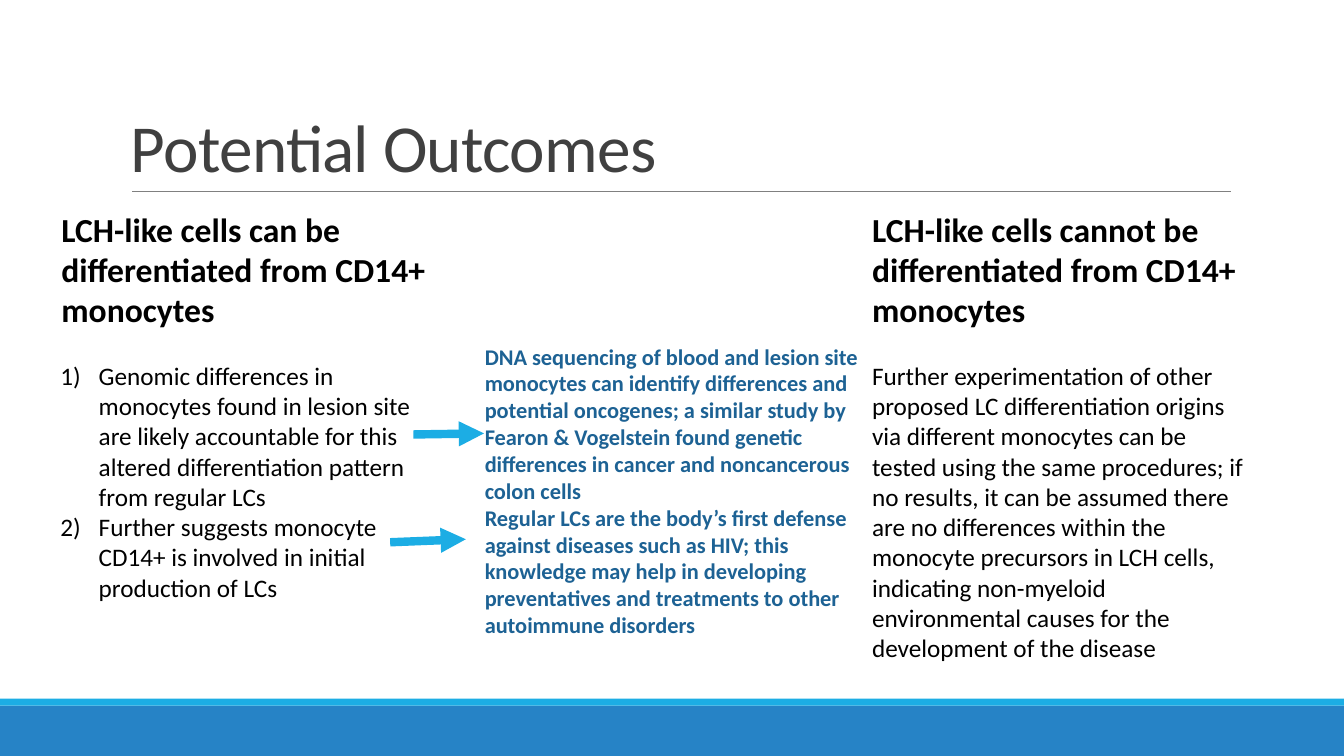
"""Build the Potential Outcomes slide: two outcomes with linked implications."""
import pptx
import pptx.dml.color
import pptx.enum.shapes
import pptx.enum.text
import pptx.oxml.ns
import pptx.util
from lxml import etree

SLIDE_WIDTH, SLIDE_HEIGHT = 13.33, 7.5
FONT = "Calibri"
COLOURS = {"band": "2683C6", "accent": "1CADE4", "rule": "808080",
           "title": "404040", "body": "000000", "implication": "1D6294"}

STYLES = {
    "title": {"size": 48, "colour": "title", "line_spacing": 0.85, "tracking": -50},
    "heading": {"size": 24, "colour": "body", "bold": True, "margin": 0.22},
    "numbered": {"size": 18, "colour": "body", "margin": 0.59, "hanging": 0.38},
    "plain": {"size": 18, "colour": "body", "margin": 0.22},
    "implication": {"size": 16, "colour": "implication", "bold": True, "margin": 0.22},
}
HEADING_GAP = 22

# Frames and lines are percentages of the slide's width and height.
TITLE_FRAME = (9, 4.13, 82.52, 21.2)
COLUMN_WIDTH = 31.5
COLUMNS = [
    (2.18, 26.93, 53.87, [
        ("heading", "LCH-like cells can be differentiated from CD14+ monocytes"),
        ("numbered", "Genomic differences in monocytes found in lesion site are likely "
                     "accountable for this altered differentiation pattern from regular LCs"),
        ("numbered", "Further suggests monocyte CD14+ is involved in initial production of LCs"),
    ]),
    (33.68, 44.67, 40.8, [
        ("implication", "DNA sequencing of blood and lesion site monocytes can identify "
                        "differences and potential oncogenes; a similar study by Fearon & "
                        "Vogelstein found genetic differences in cancer and noncancerous "
                        "colon cells"),
        ("implication", "Regular LCs are the body’s first defense against diseases such as "
                        "HIV; this knowledge may help in developing preventatives and "
                        "treatments to other autoimmune disorders"),
    ]),
    (62.5, 26.93, 61.87, [
        ("heading", "LCH-like cells cannot be differentiated from CD14+ monocytes"),
        ("plain", "Further experimentation of other proposed LC differentiation origins via "
                  "different monocytes can be tested using the same procedures; if no results, "
                  "it can be assumed there are no differences within the monocyte precursors in "
                  "LCH cells, indicating non-myeloid environmental causes for the development "
                  "of the disease"),
    ]),
]
BANDS = [("band", (0, 93.33, 100, 6.67)), ("accent", (0, 92.4, 100, 0.93))]
TITLE_RULE = (9.83, 25.33, 91.6, 25.33)
ARROWS = [(30.76, 57.47, 36.01, 57.33), (29.03, 71.73, 34.66, 71.33)]


def place(shares):
    """Turn alternating width and height percentages into lengths."""
    sides = (SLIDE_WIDTH, SLIDE_HEIGHT) * 2
    return [pptx.util.Inches(side * share / 100) for side, share in zip(sides, shares)]


def colour(name):
    """Return a named colour."""
    return pptx.dml.color.RGBColor.from_string(COLOURS[name])


def add_child(parent, tag, **attributes):
    """Append a drawing element."""
    return etree.SubElement(parent, pptx.oxml.ns.qn(tag), **attributes)


def add_band(page, name, frame):
    """Draw a filled footer band."""
    band = page.shapes.add_shape(pptx.enum.shapes.MSO_SHAPE.RECTANGLE, *place(frame))
    band.shadow.inherit = False
    band.fill.solid()
    band.fill.fore_color.rgb = colour(name)
    band.line.fill.background()


def add_line(page, ends, name, width, arrow=False):
    """Draw a straight line, with an arrowhead if wanted."""
    line = page.shapes.add_connector(pptx.enum.shapes.MSO_CONNECTOR.STRAIGHT, *place(ends))
    line.line.color.rgb = colour(name)
    line.line.width = pptx.util.Pt(width)
    if arrow:
        add_child(line.line._get_or_add_ln(), "a:tailEnd", type="triangle")
    add_child(line._element.spPr, "a:effectLst")


def add_text(page, frame, entries, anchor="TOP", grow=True):
    """Write styled paragraphs in a text box."""
    box = page.shapes.add_textbox(*place(frame))
    text = box.text_frame
    text.word_wrap = True
    text.vertical_anchor = pptx.enum.text.MSO_ANCHOR[anchor]
    if grow:
        text.auto_size = pptx.enum.text.MSO_AUTO_SIZE.SHAPE_TO_FIT_TEXT
    previous = None
    for style_name, words in entries:
        style = STYLES[style_name]
        para = text.add_paragraph() if previous else text.paragraphs[0]
        para.text = words
        properties = para._p.get_or_add_pPr()
        properties.set("marL", str(pptx.util.Inches(style.get("margin", 0))))
        properties.set("indent", str(-pptx.util.Inches(style.get("hanging", 0))))
        if "hanging" in style:
            add_child(properties, "a:buFont", typeface="+mj-lt")
            add_child(properties, "a:buAutoNum", type="arabicParenR")
        if previous == "heading":
            para.space_before = pptx.util.Pt(HEADING_GAP)
        para.line_spacing = style.get("line_spacing", 1.0)
        for span in para.runs:
            span.font.name = FONT
            span.font.size = pptx.util.Pt(style["size"])
            span.font.bold = style.get("bold", False)
            span.font.color.rgb = colour(style["colour"])
            if "tracking" in style:
                span._r.get_or_add_rPr().set("spc", str(style["tracking"]))
        previous = style_name


def main():
    """Assemble and save the deck."""
    deck = pptx.Presentation()
    deck.slide_width = pptx.util.Inches(SLIDE_WIDTH)
    deck.slide_height = pptx.util.Inches(SLIDE_HEIGHT)
    page = deck.slides.add_slide(deck.slide_layouts[6])
    for name, frame in BANDS:
        add_band(page, name, frame)
    add_line(page, TITLE_RULE, "rule", 0.5)
    add_text(page, TITLE_FRAME, [("title", "Potential Outcomes")], "BOTTOM", grow=False)
    for left, top, height, entries in COLUMNS:
        add_text(page, (left, top, COLUMN_WIDTH, height), entries)
    for ends in ARROWS:
        add_line(page, ends, "accent", 6, arrow=True)
    deck.save("out.pptx")


if __name__ == "__main__":
    main()
